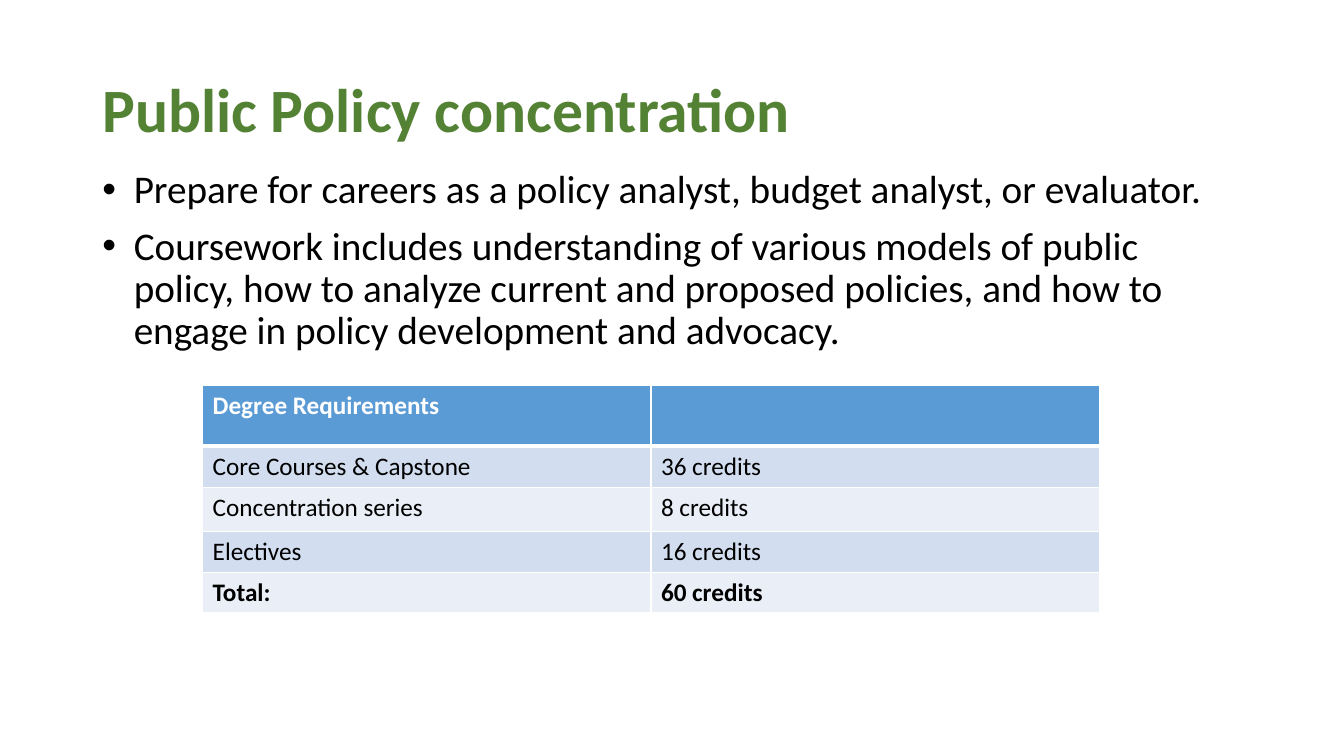
import pptx
import pptx.dml.color
import pptx.enum.text
import pptx.oxml.ns
import pptx.util
from lxml import etree

PX = 9525  # EMU per px, 96 px to the inch
FONT = "Calibri"
GREEN, BLACK, WHITE = "548235", "000000", "FFFFFF"
HEADER_BLUE, BAND_DARK, BAND_LIGHT = "5B9BD5", "D2DEEF", "EAEFF7"

GOALS = [
    "Prepare for careers as a policy analyst, budget analyst, or evaluator.",
    "Coursework includes understanding of various models of public policy, "
    "how to analyze current and proposed policies, and how to engage in "
    "policy development and advocacy.",
]
REQUIREMENTS = [
    ("Degree Requirements", ""),
    ("Core Courses & Capstone", "36 credits"),
    ("Concentration series", "8 credits"),
    ("Electives", "16 credits"),
    ("Total:", "60 credits"),
]
ROW_HEIGHTS = [58, 39, 42, 39, 39]
COLUMN_WIDTH = 427


def px(length):
    return pptx.util.Emu(length * PX)


def color(hex_value):
    return pptx.dml.color.RGBColor.from_string(hex_value)


def add_xml(parent, tag, **attributes):
    return etree.SubElement(parent, pptx.oxml.ns.qn(tag), attributes)


def style(paragraph, size, hex_value, bold=False):
    for run in paragraph.runs:
        run.font.name = FONT
        run.font.size = pptx.util.Pt(size)
        run.font.bold = bold
        run.font.color.rgb = color(hex_value)


def add_text_frame(slide, left, top, width, height, anchor):
    frame = slide.shapes.add_textbox(px(left), px(top), px(width), px(height)).text_frame
    frame.word_wrap = True
    frame.vertical_anchor = anchor
    return frame


def add_title(slide, text):
    frame = add_text_frame(slide, 88, 38, 1104, 139, pptx.enum.text.MSO_ANCHOR.MIDDLE)
    frame.text = text
    heading = frame.paragraphs[0]
    heading.line_spacing = 0.9
    style(heading, 44, GREEN, bold=True)


def add_bullets(slide, items):
    frame = add_text_frame(slide, 88, 157, 1104, 457, pptx.enum.text.MSO_ANCHOR.TOP)
    frame.text = "\n".join(items)
    for goal in frame.paragraphs:
        goal.line_spacing = 0.9
        goal.space_before = pptx.util.Pt(10)
        style(goal, 28, BLACK)
        properties = goal._p.get_or_add_pPr()
        properties.set("marL", str(px(30)))
        properties.set("indent", str(px(-30)))
        add_xml(properties, "a:buFont", typeface="Arial")
        add_xml(properties, "a:buChar", char="•")


def add_borders(cell, top=1, bottom=1):
    properties = cell._tc.get_or_add_tcPr()
    for side, points in (("L", 1), ("R", 1), ("T", top), ("B", bottom)):
        line = add_xml(properties, f"a:ln{side}", w=str(pptx.util.Pt(points)))
        add_xml(add_xml(line, "a:solidFill"), "a:srgbClr", val=WHITE)


def add_requirements_table(slide, rows):
    table = slide.shapes.add_table(
        len(rows), 2, px(193), px(367), px(2 * COLUMN_WIDTH), px(sum(ROW_HEIGHTS))
    ).table
    for column in table.columns:
        column.width = px(COLUMN_WIDTH)
    for index, (entries, height) in enumerate(zip(rows, ROW_HEIGHTS)):
        table.rows[index].height = px(height)
        is_header, is_total = index == 0, index == len(rows) - 1
        band = BAND_DARK if index % 2 else BAND_LIGHT
        for column_index, entry in enumerate(entries):
            cell = table.cell(index, column_index)
            cell.text = entry
            style(cell.text_frame.paragraphs[0], 18,
                  WHITE if is_header else BLACK, bold=is_header or is_total)
            # Heavy rule between the header and the first row
            add_borders(cell, top=3 if index == 1 else 1, bottom=3 if is_header else 1)
            cell.fill.solid()
            cell.fill.fore_color.rgb = color(HEADER_BLUE if is_header else band)


def main():
    deck = pptx.Presentation()
    deck.slide_width, deck.slide_height = px(1280), px(720)
    slide = deck.slides.add_slide(deck.slide_layouts[6])

    # Heading and goals
    add_title(slide, "Public Policy concentration")
    add_bullets(slide, GOALS)

    # Credits per requirement
    add_requirements_table(slide, REQUIREMENTS)

    deck.save("out.pptx")


if __name__ == "__main__":
    main()
